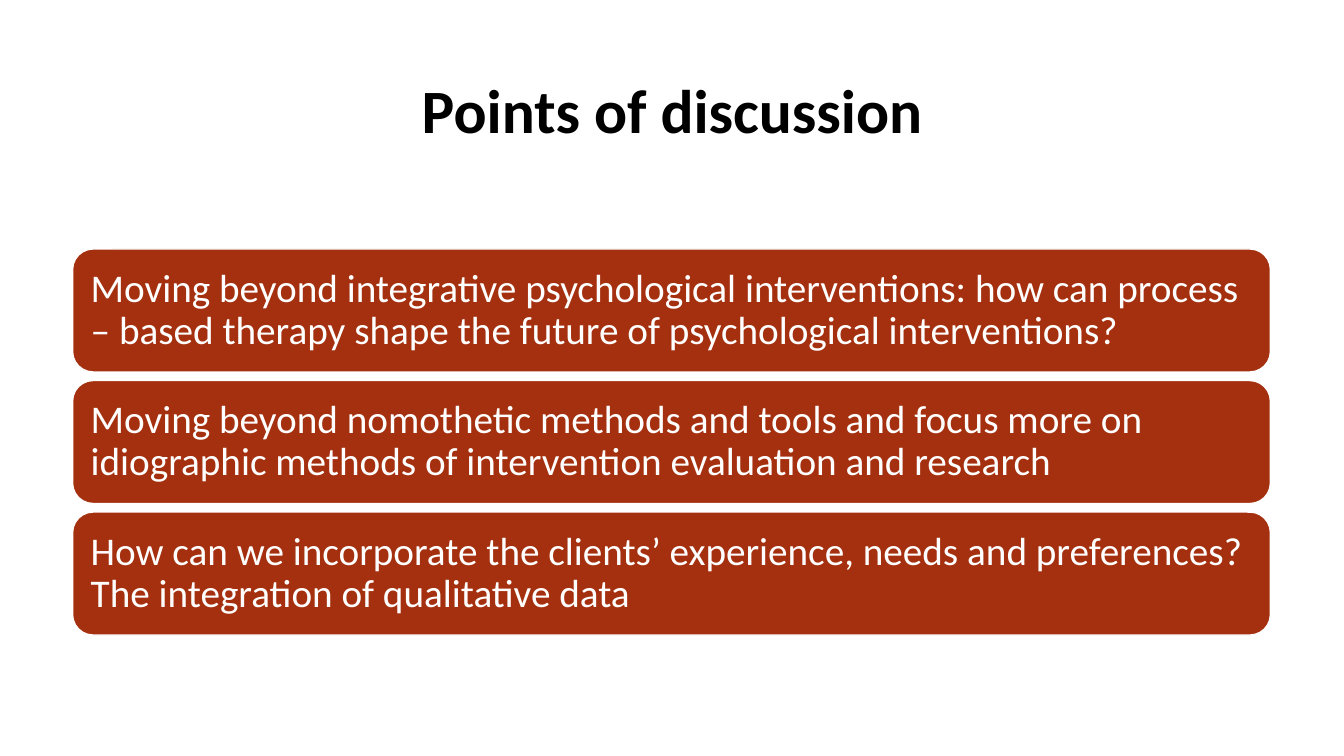
from pptx import Presentation
from pptx.dml.color import RGBColor
from pptx.enum.shapes import MSO_SHAPE
from pptx.enum.text import MSO_ANCHOR, MSO_AUTO_SIZE, PP_ALIGN
from pptx.util import Inches, Pt

TITLE = "Points of discussion"
POINTS = [
    "Moving beyond integrative psychological interventions: how can process – based therapy shape the future of psychological interventions?",
    "Moving beyond nomothetic methods and tools and focus more on idiographic methods of intervention evaluation and research",
    "How can we incorporate the clients’ experience, needs and preferences? The integration of qualitative data",
]

FONT = "Calibri"
BLACK = RGBColor(0x00, 0x00, 0x00)
WHITE = RGBColor(0xFF, 0xFF, 0xFF)
RUST = RGBColor(0xA5, 0x30, 0x0F)

CARD_LEFT, CARD_TOP = 0.72, 2.47
CARD_WIDTH, CARD_HEIGHT = 11.88, 1.22
CARD_PITCH = 1.305
CARD_INSET = Inches(0.12)


def write_text(text_frame, text, size, color, align, bold=False):
    text_frame.text = text
    text_frame.word_wrap = True
    text_frame.auto_size = MSO_AUTO_SIZE.NONE
    text_frame.vertical_anchor = MSO_ANCHOR.MIDDLE
    paragraph = text_frame.paragraphs[0]
    paragraph.alignment = align
    paragraph.line_spacing = 0.9
    font = paragraph.runs[0].font
    font.name = FONT
    font.size = Pt(size)
    font.bold = bold
    font.color.rgb = color


def add_card(slide, index, text):
    card = slide.shapes.add_shape(
        MSO_SHAPE.ROUNDED_RECTANGLE,
        Inches(CARD_LEFT), Inches(CARD_TOP + index * CARD_PITCH),
        Inches(CARD_WIDTH), Inches(CARD_HEIGHT),
    )
    card.shadow.inherit = False
    card.fill.solid()
    card.fill.fore_color.rgb = RUST
    card.line.color.rgb = WHITE
    card.line.width = Pt(1)
    text_frame = card.text_frame
    text_frame.margin_left = text_frame.margin_right = CARD_INSET
    text_frame.margin_top = text_frame.margin_bottom = CARD_INSET
    write_text(text_frame, text, 28, WHITE, PP_ALIGN.LEFT)


def main():
    presentation = Presentation()
    presentation.slide_width = Inches(13.33)
    presentation.slide_height = Inches(7.5)
    slide = presentation.slides.add_slide(presentation.slide_layouts[5])

    title = slide.shapes.title
    title.left, title.top = Inches(0.92), Inches(0.4)
    title.width, title.height = Inches(11.5), Inches(1.45)
    write_text(title.text_frame, TITLE, 44, BLACK, PP_ALIGN.CENTER, bold=True)

    for index, point in enumerate(POINTS):
        add_card(slide, index, point)

    presentation.save("out.pptx")


if __name__ == "__main__":
    main()
